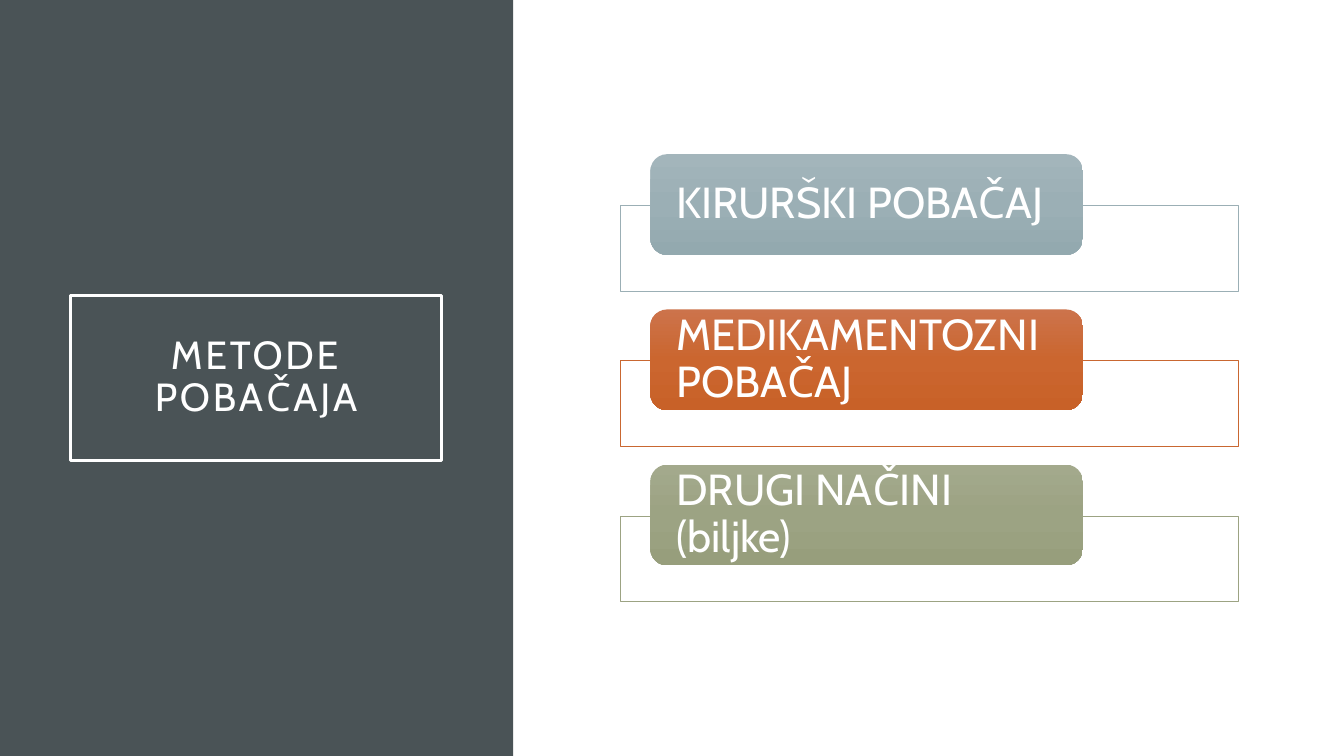
from copy import deepcopy
from dataclasses import dataclass

from pptx import Presentation
from pptx.dml.color import RGBColor
from pptx.enum.shapes import MSO_SHAPE
from pptx.enum.text import MSO_ANCHOR, PP_ALIGN
from pptx.oxml.ns import qn
from pptx.shapes.autoshape import Shape
from pptx.slide import Slide
from pptx.util import Inches, Pt

FONT = "Cabin"
COLORS = {"white": "FFFFFF", "panel": "4A5356"}
TOP, STEP = 1.53, 1.54


@dataclass
class Method:
    label: str
    light: str
    base: str
    dark: str


METHODS = [
    Method("KIRURŠKI POBAČAJ", "A3B5BB", "9BAFB5", "93A9AF"),
    Method("MEDIKAMENTOZNI POBAČAJ", "CC734B", "CB662F", "C86128"),
    Method("DRUGI NAČINI (biljke)", "A3A98C", "9CA383", "979E7C"),
]


def rgb(color: str) -> RGBColor:
    return RGBColor.from_string(color)


def add_box(slide: Slide, kind: MSO_SHAPE, left: float, top: float,
            width: float, height: float, fill: str = "",
            line: str = "", weight: float = 0.5) -> Shape:
    """Add a flat shape; an empty color means no fill or no line."""
    box = slide.shapes.add_shape(kind, Inches(left), Inches(top),
                                 Inches(width), Inches(height))
    box.shadow.inherit = False
    if fill:
        box.fill.solid()
        box.fill.fore_color.rgb = rgb(fill)
    else:
        box.fill.background()
    if line:
        box.line.color.rgb = rgb(line)
        box.line.width = Pt(weight)
    else:
        box.line.fill.background()
    return box


def shade(box: Shape, colors: list[str]) -> None:
    """Fill from top to bottom with three evenly spaced colors."""
    box.fill.gradient()
    box.fill.gradient_angle = 270
    first = box._element.spPr.find(qn("a:gradFill")).find(qn("a:gsLst"))[0]
    first.addnext(deepcopy(first))
    for i, (stop, color) in enumerate(zip(box.fill.gradient_stops, colors)):
        stop.position = i / 2
        stop.color.rgb = rgb(color)


def write(box: Shape, text: str, size: float, align: PP_ALIGN,
          side: float, edge: float, space: float = 0) -> None:
    """Set white text with side and edge insets and letter spacing, in points."""
    frame = box.text_frame
    frame.word_wrap = True
    frame.vertical_anchor = MSO_ANCHOR.MIDDLE
    frame.margin_left = frame.margin_right = Inches(side)
    frame.margin_top = frame.margin_bottom = Inches(edge)
    para = frame.paragraphs[0]
    para.alignment = align
    para.line_spacing = 0.9
    run = para.add_run()
    run.text = text
    run.font.name = FONT
    run.font.size = Pt(size)
    run.font.color.rgb = rgb(COLORS["white"])
    if space:
        run.font._element.set("spc", str(int(space * 100)))


def add_method(slide: Slide, item: Method, top: float) -> None:
    line = "C96731" if item.base == "CB662F" else item.base
    add_box(slide, MSO_SHAPE.RECTANGLE, 6.15, top + 0.51, 6.13, 0.85,
            COLORS["white"], line)
    pill = add_box(slide, MSO_SHAPE.ROUNDED_RECTANGLE, 6.45, top, 4.29, 1)
    shade(pill, [item.light, item.base, item.dark])
    write(pill, item.label, 31, PP_ALIGN.LEFT, 0.21, 0.05)


def main() -> None:
    deck = Presentation()
    deck.slide_width, deck.slide_height = Inches(13.33), Inches(7.5)
    slide = deck.slides.add_slide(deck.slide_layouts[6])
    add_box(slide, MSO_SHAPE.RECTANGLE, 0, 0, 5.09, 7.5, COLORS["panel"])
    title = add_box(slide, MSO_SHAPE.RECTANGLE, 0.7, 2.93, 3.68, 1.64,
                    line=COLORS["white"], weight=2.5)
    write(title, "METODE POBAČAJA", 28, PP_ALIGN.CENTER, 0.2, 0.2, 2)
    for i, item in enumerate(METHODS):
        add_method(slide, item, TOP + i * STEP)
    deck.save("out.pptx")


if __name__ == "__main__":
    main()
